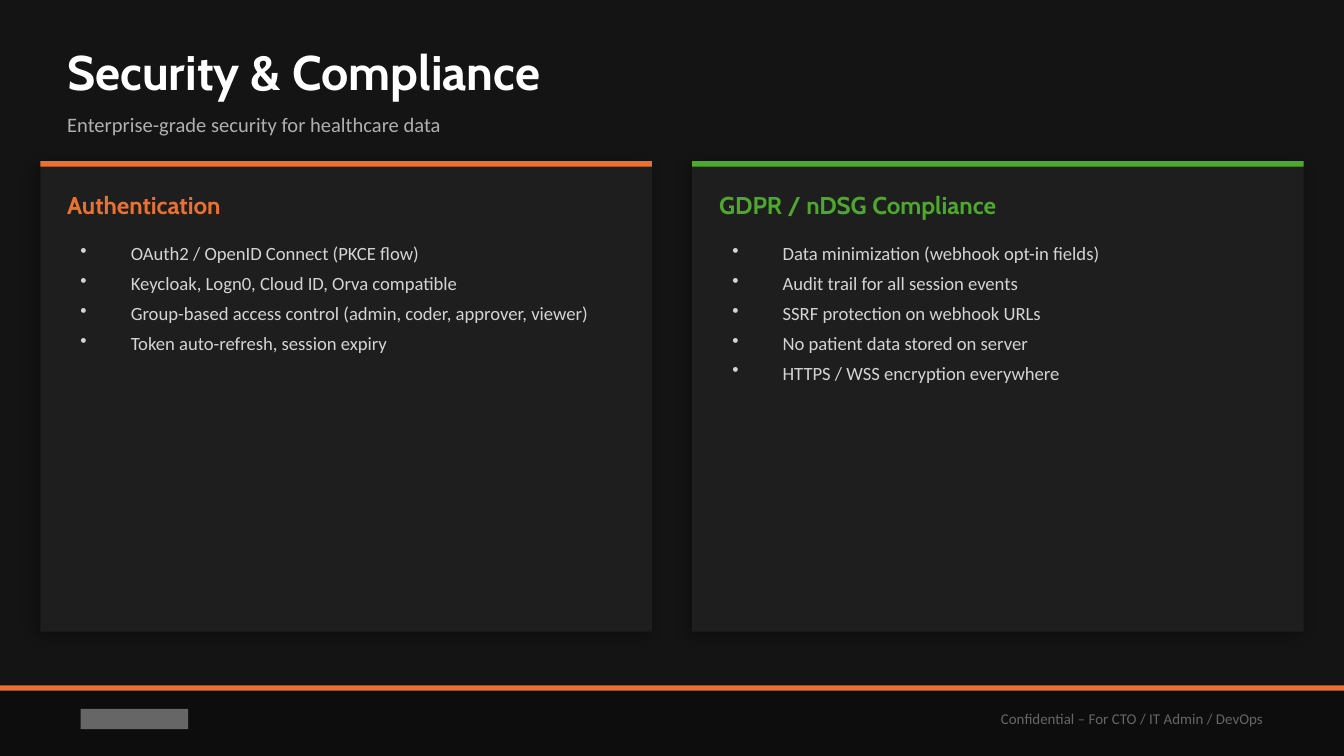
from lxml import etree
from pptx import Presentation
from pptx.dml.color import RGBColor
from pptx.enum.shapes import MSO_SHAPE
from pptx.enum.text import MSO_ANCHOR, PP_ALIGN
from pptx.oxml.ns import qn
from pptx.util import Emu, Pt

RECTANGLE = MSO_SHAPE.RECTANGLE
TOP, MIDDLE = MSO_ANCHOR.TOP, MSO_ANCHOR.MIDDLE
LEFT, RIGHT = PP_ALIGN.LEFT, PP_ALIGN.RIGHT

PX = 914400 // 200  # 200 px to the inch
PAGE_WIDTH, PAGE_HEIGHT = 2000, 1125
HEADING_FONT, BODY_FONT = "Cabin", "Calibri"
ORANGE, GREEN, WHITE, GREY = "E97132", "4EA72E", "FFFFFF", "666666"
RULE_HEIGHT = 8
BULLET_INDENT = 75

PANELS = [
    ("Authentication", ORANGE, [
        "OAuth2 / OpenID Connect (PKCE flow)",
        "Keycloak, Logn0, Cloud ID, Orva compatible",
        "Group-based access control (admin, coder, approver, viewer)",
        "Token auto-refresh, session expiry",
    ]),
    ("GDPR / nDSG Compliance", GREEN, [
        "Data minimization (webhook opt-in fields)",
        "Audit trail for all session events",
        "SSRF protection on webhook URLs",
        "No patient data stored on server",
        "HTTPS / WSS encryption everywhere",
    ]),
]


def px(value):
    return Emu(value * PX)


def color(hex_string):
    return RGBColor.from_string(hex_string)


def add_rectangle(page, left, top, width, height, fill):
    shape = page.shapes.add_shape(
        RECTANGLE, px(left), px(top), px(width), px(height))
    shape.fill.solid()
    shape.fill.fore_color.rgb = color(fill)
    shape.line.fill.background()
    shape.shadow.inherit = False
    return shape


def add_drop_shadow(shape):
    effects = shape._element.spPr.find(qn("a:effectLst"))
    shadow = etree.SubElement(
        effects, qn("a:outerShdw"), blurRad=str(Pt(8)), dist=str(Pt(3)),
        dir=str(135 * 60000), algn="bl", rotWithShape="0")
    tint = etree.SubElement(shadow, qn("a:srgbClr"), val="000000")
    etree.SubElement(tint, qn("a:alpha"), val="35000")


def add_text_frame(page, left, top, width, height, anchor=MIDDLE, inset=True):
    box = page.shapes.add_textbox(px(left), px(top), px(width), px(height))
    frame = box.text_frame
    frame.word_wrap = True
    frame.vertical_anchor = anchor
    if not inset:
        frame.margin_left = frame.margin_right = 0
        frame.margin_top = frame.margin_bottom = 0
    return frame


def add_span(para, text, size, ink, font=BODY_FONT, bold=False):
    span = para.add_run()
    span.text = text
    span.font.size = Pt(size)
    span.font.name = font
    span.font.bold = bold
    span.font.color.rgb = color(ink)


def make_bullet(para):
    properties = para._p.get_or_add_pPr()
    properties.set("marL", str(px(BULLET_INDENT)))
    properties.set("indent", str(px(-BULLET_INDENT)))
    etree.SubElement(properties, qn("a:buSzPct"), val="100000")
    etree.SubElement(properties, qn("a:buChar"), char="•")
    para.space_after = Pt(4)


def add_footer(page, left, top, width, height):
    add_rectangle(page, left, top, width, height, "0D0D0D")
    add_rectangle(page, left, top, width, RULE_HEIGHT, ORANGE)

    # Plain block for the company mark
    add_rectangle(page, left + 120, top + 35, 160, 30, GREY)

    # Audience note
    frame = add_text_frame(page, left + width - 900, top + 10, 800, 80)
    para = frame.paragraphs[0]
    para.alignment = RIGHT
    add_span(para, "Confidential – For CTO / IT Admin / DevOps", 8, GREY)


def add_header(page, left, top, width):
    frame = add_text_frame(page, left, top, width, 110, inset=False)
    add_span(frame.paragraphs[0], "Security & Compliance", 26, WHITE,
             HEADING_FONT, True)
    frame = add_text_frame(page, left, top + 100, width, 70, inset=False)
    add_span(frame.paragraphs[0],
             "Enterprise-grade security for healthcare data", 11, "B0B0B0")


def add_panel(page, left, top, width, height, title, accent, items):
    add_drop_shadow(add_rectangle(page, left, top, width, height, "1E1E1E"))
    add_rectangle(page, left, top, width, RULE_HEIGHT, accent)

    # Panel title
    padding = 40
    inner_width = width - 2 * padding
    frame = add_text_frame(
        page, left + padding, top + 30, inner_width, 70, inset=False)
    add_span(frame.paragraphs[0], title, 13, accent, HEADING_FONT, True)

    # Bullet list
    frame = add_text_frame(
        page, left + padding, top + 110, inner_width, height - 140, TOP)
    for index, item in enumerate(items):
        para = frame.add_paragraph() if index else frame.paragraphs[0]
        para.alignment = LEFT
        make_bullet(para)
        add_span(para, item, 10, "D4D4D4")


def main():
    deck = Presentation()
    deck.slide_width, deck.slide_height = px(PAGE_WIDTH), px(PAGE_HEIGHT)
    page = deck.slides.add_slide(deck.slide_layouts[6])
    page.background.fill.solid()
    page.background.fill.fore_color.rgb = color("141414")

    footer_top = 1020
    add_footer(page, 0, footer_top, PAGE_WIDTH, PAGE_HEIGHT - footer_top)
    add_header(page, 100, 50, PAGE_WIDTH - 200)

    # Two equal panels between the side margins
    margin, gap = 60, 60
    width = (PAGE_WIDTH - 2 * margin - gap) // 2
    for index, (title, accent, items) in enumerate(PANELS):
        left = margin + index * (width + gap)
        add_panel(page, left, 240, width, 700, title, accent, items)

    deck.save("out.pptx")


if __name__ == "__main__":
    main()
